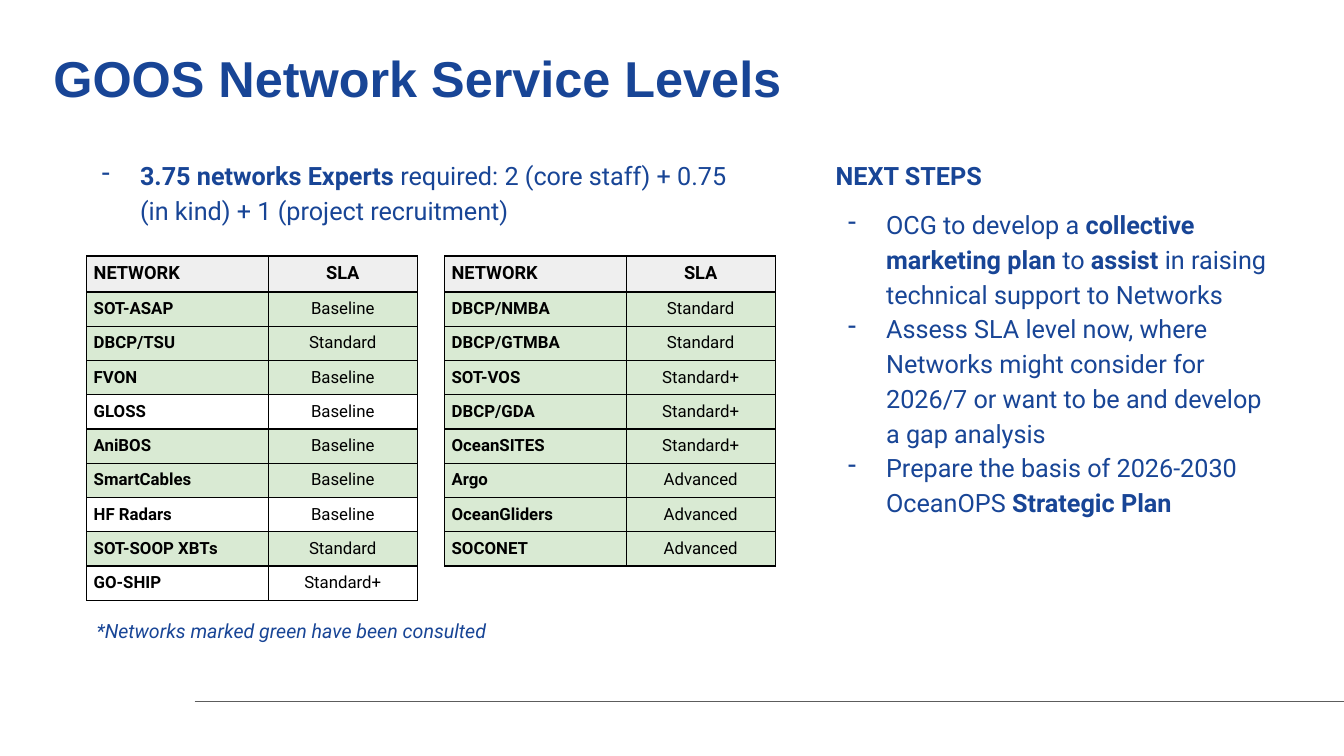
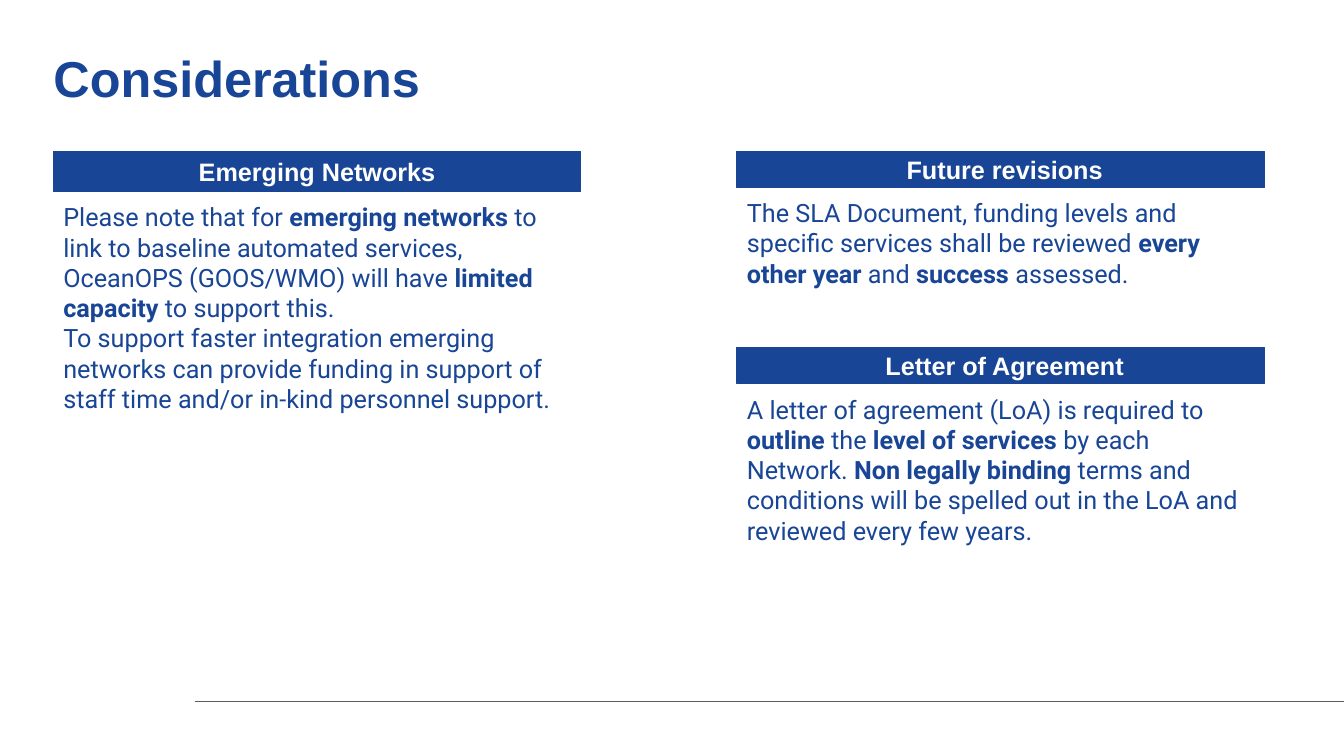
"""Build two slides on network service levels and related considerations."""
import dataclasses

import lxml.etree
import pptx
import pptx.dml.color
import pptx.enum.shapes
import pptx.enum.text
import pptx.oxml.ns
import pptx.util

Inches, Pt = pptx.util.Inches, pptx.util.Pt
qn = pptx.oxml.ns.qn
CENTER = pptx.enum.text.PP_ALIGN.CENTER
LEFT = pptx.enum.text.PP_ALIGN.LEFT
MIDDLE = pptx.enum.text.MSO_ANCHOR.MIDDLE


@dataclasses.dataclass(frozen=True)
class Theme:
    blue: str = "184596"
    white: str = "FFFFFF"
    black: str = "000000"
    rule: str = "5C5C5C"
    header: str = "EFEFEF"
    consulted: str = "D9EAD3"
    heading_font: str = "Arial"
    body_font: str = "Roboto"
    title_size: int = 36
    body_size: int = 18
    note_size: int = 14
    header_size: int = 13
    cell_size: int = 12
    loose: float = 1.15
    tight: float = 0.85


THEME = Theme()
WIDTH, HEIGHT = 13.33, 7.5
MARGIN, BODY_TOP = 0.53, 1.5

TITLES = ["GOOS Network Service Levels", "Considerations"]
STAFFING = "|3.75 networks Experts| required: 2 (core staff) + 0.75 (in kind) + 1 (project recruitment)"
NOTE = "*Networks marked green have been consulted"
NEXT_HEADING = "|NEXT STEPS|"
NEXT_STEPS = [
    "OCG to develop a |collective marketing plan |to |assist |in raising technical support to Networks",
    "Assess SLA level now, where Networks might consider for 2026/7 or want to be and develop a gap analysis",
    "Prepare the basis of 2026-2030 OceanOPS |Strategic Plan|",
]
TABLE_HEAD = ("NETWORK", "SLA")
NETWORKS = [
    [
        ("SOT-ASAP", "Baseline"), ("DBCP/TSU", "Standard"), ("FVON", "Baseline"),
        ("GLOSS", "Baseline"), ("AniBOS", "Baseline"), ("SmartCables", "Baseline"),
        ("HF Radars", "Baseline"), ("SOT-SOOP XBTs", "Standard"), ("GO-SHIP", "Standard+"),
    ],
    [
        ("DBCP/NMBA", "Standard"), ("DBCP/GTMBA", "Standard"), ("SOT-VOS", "Standard+"),
        ("DBCP/GDA", "Standard+"), ("OceanSITES", "Standard+"), ("Argo", "Advanced"),
        ("OceanGliders", "Advanced"), ("SOCONET", "Advanced"),
    ],
]
NOT_CONSULTED = {"GLOSS", "HF Radars", "GO-SHIP"}
TABLE_LEFT, TABLE_TOP, TABLE_GAP = 0.86, 2.54, 0.27
TABLE_COLUMNS, ROW_HEIGHT = (1.8, 1.48), 0.28

PANEL_WIDTH, PANEL_COLUMNS = 5.23, (MARGIN, 7.31)
PANELS = [
    dict(column=0, top=BODY_TOP, bar=0.4, indent=0, body=2.28, heading="Emerging Networks", text=[
        "Please note that for |emerging networks| to link to baseline automated services, "
        "OceanOPS (GOOS/WMO) will have |limited capacity| to support this.",
        "To support faster integration emerging networks can provide funding in support of "
        "staff time and/or in-kind personnel support.",
    ]),
    dict(column=1, top=BODY_TOP, bar=0.36, indent=0.08, body=1.05, heading="Future revisions", text=[
        "The SLA Document, funding levels and specific services shall be reviewed "
        "|every other year| and |success |assessed.",
    ]),
    dict(column=1, top=3.45, bar=0.36, indent=0.08, body=1.56, heading="Letter of Agreement", text=[
        "A letter of agreement (LoA) is required to |outline |the |level of services| by each Network. "
        "|Non legally binding| terms and conditions will be spelled out in the LoA and reviewed every few years.",
    ]),
]


def rgb(color):
    return pptx.dml.color.RGBColor.from_string(color)


def write(p, text, size=THEME.body_size, font=THEME.body_font, color=THEME.blue, italic=False):
    for i, part in enumerate(text.split("|")):
        if part:
            r = p.add_run()
            r.text = part
            r.font.size, r.font.name = Pt(size), font
            r.font.bold, r.font.italic = i % 2 == 1, italic
            r.font.color.rgb = rgb(color)


def set_insets(tf, x, y):
    tf.margin_left = tf.margin_right = Inches(x)
    tf.margin_top = tf.margin_bottom = Inches(y)


def add_box(s, left, top, width, height, inset=(0.1, 0.05)):
    tf = s.shapes.add_textbox(*map(Inches, (left, top, width, height))).text_frame
    tf.word_wrap = True
    set_insets(tf, *inset)
    return tf


def add_dash(p):
    pPr = p._p.get_or_add_pPr()
    pPr.set("marL", str(Inches(0.5)))
    pPr.set("indent", str(Inches(-0.38)))
    fill = lxml.etree.SubElement(pPr, qn("a:buClr"))
    lxml.etree.SubElement(fill, qn("a:srgbClr"), val=THEME.blue)
    lxml.etree.SubElement(pPr, qn("a:buChar"), char="-")
    p.line_spacing = THEME.loose


def add_base(prs, title):
    s = prs.slides.add_slide(prs.slide_layouts[6])
    y = Inches(6.96)
    rule = s.shapes.add_connector(
        pptx.enum.shapes.MSO_CONNECTOR.STRAIGHT, Inches(1.93), y, Inches(WIDTH), y)
    rule.line.color.rgb, rule.line.width = rgb(THEME.rule), Pt(0.75)
    lxml.etree.SubElement(rule._element.spPr, qn("a:effectLst"))
    p = add_box(s, MARGIN, 0.56, 11.76, 0.63, (0, 0)).paragraphs[0]
    p.line_spacing = THEME.tight
    write(p, f"|{title}|", THEME.title_size, THEME.heading_font)
    return s


def add_borders(cell):
    tcPr = cell._tc.get_or_add_tcPr()
    for side in ("lnL", "lnR", "lnT", "lnB"):
        ln = lxml.etree.SubElement(tcPr, qn(f"a:{side}"), w=str(Pt(1)))
        fill = lxml.etree.SubElement(ln, qn("a:solidFill"))
        lxml.etree.SubElement(fill, qn("a:srgbClr"), val=THEME.black)


def add_network_table(s, left, networks):
    rows = [TABLE_HEAD] + networks
    table = s.shapes.add_table(
        len(rows), len(TABLE_COLUMNS), Inches(left), Inches(TABLE_TOP),
        Inches(sum(TABLE_COLUMNS)), Inches(ROW_HEIGHT * len(rows))).table
    table.first_row = table.horz_banding = False
    for column, width in zip(table.columns, TABLE_COLUMNS):
        column.width = Inches(width)
    for i, row in enumerate(rows):
        table.rows[i].height = Inches(ROW_HEIGHT)
        head = i == 0
        fill = THEME.header if head else THEME.white if row[0] in NOT_CONSULTED else THEME.consulted
        for j, text in enumerate(row):
            cell = table.cell(i, j)
            set_insets(cell, 0.07, 0.07)
            add_borders(cell)
            cell.fill.solid()
            cell.fill.fore_color.rgb = rgb(fill)
            p = cell.text_frame.paragraphs[0]
            p.alignment = CENTER if j else LEFT
            write(p, f"|{text}|" if head or j == 0 else text,
                  THEME.header_size if head else THEME.cell_size, color=THEME.black)


def add_panel(s, column, top, bar, indent, body, heading, text):
    left = PANEL_COLUMNS[column]
    sp = s.shapes.add_shape(
        pptx.enum.shapes.MSO_SHAPE.RECTANGLE, *map(Inches, (left, top, PANEL_WIDTH, bar)))
    sp.shadow.inherit = False
    sp.fill.solid()
    sp.fill.fore_color.rgb = sp.line.color.rgb = rgb(THEME.blue)
    sp.line.width = Pt(0.75)
    tf = sp.text_frame
    tf.vertical_anchor, tf.word_wrap = MIDDLE, True
    set_insets(tf, 0.13, 0.13)
    p = tf.paragraphs[0]
    p.alignment = CENTER
    p._p.get_or_add_pPr().set("marL", str(Inches(indent)))
    write(p, f"|{heading}|", font=THEME.heading_font, color=THEME.white)
    tf = add_box(s, left, top + bar, PANEL_WIDTH, body, (0.1, 0.1))
    for i, line in enumerate(text):
        write(tf.add_paragraph() if i else tf.paragraphs[0], line)


def build_levels(prs):
    s = add_base(prs, TITLES[0])
    for i, networks in enumerate(NETWORKS):
        add_network_table(s, TABLE_LEFT + i * (sum(TABLE_COLUMNS) + TABLE_GAP), networks)
    p = add_box(s, TABLE_LEFT, 6.06, 4.23, 0.4).paragraphs[0]
    p.line_spacing = THEME.loose
    write(p, NOTE, THEME.note_size, italic=True)
    p = add_box(s, 0.79, BODY_TOP, 6.81, 0.98).paragraphs[0]
    add_dash(p)
    write(p, STAFFING)
    tf = add_box(s, 8.19, BODY_TOP, 4.62, 4.26)
    tf.paragraphs[0].line_spacing = THEME.loose
    write(tf.paragraphs[0], NEXT_HEADING)
    for i, step in enumerate(NEXT_STEPS):
        p = tf.add_paragraph()
        add_dash(p)
        p.space_before = Pt(0 if i else 10)
        write(p, step)


def build_considerations(prs):
    s = add_base(prs, TITLES[1])
    for panel in PANELS:
        add_panel(s, **panel)


def main():
    prs = pptx.Presentation()
    prs.slide_width, prs.slide_height = Inches(WIDTH), Inches(HEIGHT)
    build_levels(prs)
    build_considerations(prs)
    prs.save("out.pptx")


if __name__ == "__main__":
    main()
